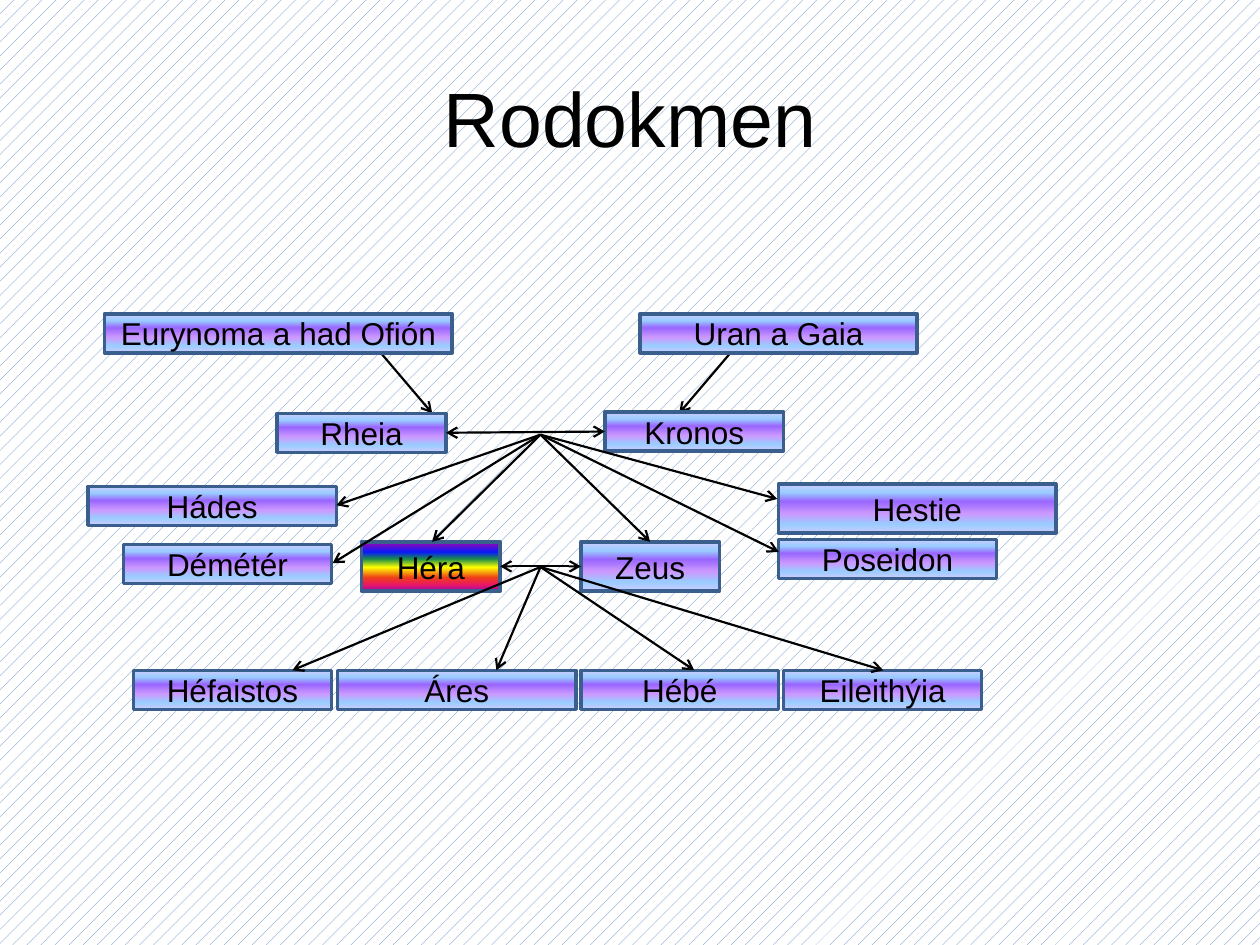
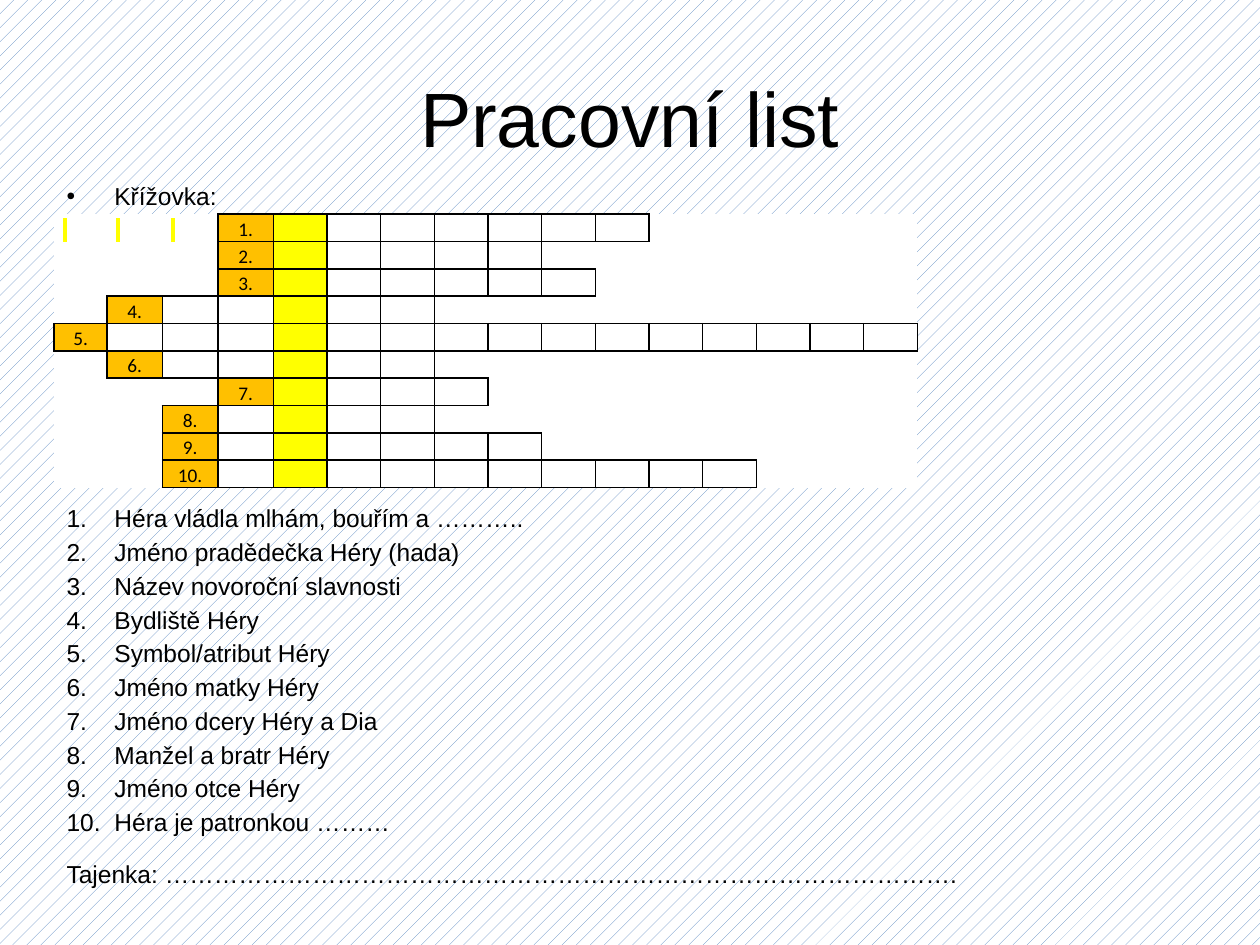
from lxml import etree
from pptx import Presentation
from pptx.dml.color import RGBColor
from pptx.enum.dml import MSO_PATTERN
from pptx.enum.shapes import MSO_CONNECTOR, MSO_SHAPE
from pptx.enum.text import MSO_ANCHOR, PP_ALIGN
from pptx.oxml.ns import qn
from pptx.util import Inches, Pt

BLACK = RGBColor(0x00, 0x00, 0x00)
WHITE = RGBColor(0xFF, 0xFF, 0xFF)
HATCH_BLUE = RGBColor(0x4F, 0x81, 0xBD)
BOX_EDGE = RGBColor(0x3A, 0x5F, 0x8C)
NUMBER_ORANGE = RGBColor(0xFF, 0xC0, 0x00)
SOLUTION_YELLOW = RGBColor(0xFF, 0xFF, 0x00)
LAVENDER = RGBColor(0xCC, 0xCC, 0xFF)
SKY = RGBColor(0x99, 0xCC, 0xFF)
VIOLET = RGBColor(0x99, 0x66, 0xFF)
LILAC = RGBColor(0xCC, 0x99, 0xFF)
PURPLE = RGBColor(0xA6, 0x03, 0xAB)
BLUE = RGBColor(0x08, 0x19, 0xFB)
GREEN = RGBColor(0x1A, 0x8D, 0x48)
RED = RGBColor(0xEE, 0x3F, 0x17)
CRIMSON = RGBColor(0xE8, 0x17, 0x66)

# Gradient stops: percent and colour
DUSK = [(0, LAVENDER), (18, SKY), (36, VIOLET), (61, LILAC), (82, SKY), (100, LAVENDER)]
RAINBOW = [(0, PURPLE), (21, BLUE), (35, GREEN), (52, SOLUTION_YELLOW),
           (73, RED), (88, CRIMSON), (100, PURPLE)]

# Slide grid: 100 columns by 75 rows of square cells
COLUMNS, ROWS = 100, 75
CELL = Inches(0.1)

TITLE_FONT = {"name": "Arial", "size": Pt(44)}
BOX_FONT = {"name": "Arial", "size": Pt(18)}
CLUE_FONT = {"name": "Arial", "size": Pt(14)}
CELL_FONT = {"name": "Calibri", "size": Pt(11)}

# Family tree boxes: left, top, width, height in grid cells
FAMILY = {
    "Héra": (28.7, 43, 11, 3.9),
    "Zeus": (46.1, 43, 11, 3.9),
    "Rheia": (22, 32.8, 13.4, 3.1),
    "Kronos": (48, 32.7, 14.2, 3.1),
    "Eurynoma a had Ofión": (8.3, 24.9, 27.6, 3.1),
    "Uran a Gaia": (50.8, 24.9, 22, 3.1),
    "Héfaistos": (10.6, 53.2, 15.7, 3.1),
    "Áres": (26.8, 53.2, 18.9, 3.1),
    "Hébé": (46.1, 53.2, 15.7, 3.1),
    "Eileithýia": (62.2, 53.2, 15.7, 3.1),
    "Hádes": (7, 38.6, 19.7, 3.1),
    "Démétér": (9.8, 43.2, 16.5, 3.1),
    "Poseidon": (61.8, 42.8, 17.3, 3.1),
    "Hestie": (61.8, 38.4, 22, 3.9),
}
COUPLES = [("Rheia", "Kronos"), ("Héra", "Zeus")]
GRANDPARENT_ARROWS = [((30.3, 28.1), (34.3, 32.8)), ((57.9, 28.1), (53.9, 32.8))]
# Origin of each brood and the ends of its arrows
BROODS = {
    (42.9, 34.5): [(26.7, 40.1), (26.4, 44.7), (34.3, 43), (51.6, 43),
                   (61.7, 39.6), (61.8, 43.8)],
    (42.9, 45): [(23.2, 53.2), (39.4, 53.2), (55.1, 53.2), (70.1, 53.2)],
}

# First and last crossword column of each answer; the first holds its number
ANSWERS = [(3, 10), (3, 8), (3, 9), (1, 6), (0, 15),
           (1, 6), (3, 7), (2, 6), (2, 8), (2, 12)]
SOLUTION_COLUMN = 4
CROSSWORD_WIDTHS = [4.2] + [4.4] * 3 + [4.26] * 12
CROSSWORD_ROW = 2.17

CLUES = [
    "Héra vládla mlhám, bouřím a ………..",
    "Jméno pradědečka Héry (hada)",
    "Název novoroční slavnosti",
    "Bydliště Héry",
    "Symbol/atribut Héry",
    "Jméno matky Héry",
    "Jméno dcery Héry a Dia",
    "Manžel a bratr Héry",
    "Jméno otce Héry",
    "Héra je patronkou ………",
]
SOLUTION_LINE = "Tajenka: ……………………………………………………………………………………."


def cells(*counts):
    return [round(count * CELL) for count in counts]


def apply_format(target, values):
    for attribute, value in values.items():
        setattr(target, attribute, value)


def add_xml(parent, tag, **attributes):
    return etree.SubElement(parent, qn(tag), attributes)


def write(paragraph, text, font, **layout):
    run = paragraph.add_run()
    run.text = text
    apply_format(run.font, font)
    run.font.color.rgb = BLACK
    apply_format(paragraph, layout)
    return run


def add_bullet(paragraph, tag, **attributes):
    properties = paragraph._p.get_or_add_pPr()
    properties.set("marL", str(Inches(0.38)))
    properties.set("indent", str(-Inches(0.38)))
    add_xml(properties, "a:buFont", typeface="Arial")
    add_xml(properties, tag, **attributes)


def add_text_frame(slide, *place, anchor=MSO_ANCHOR.TOP):
    frame = slide.shapes.add_textbox(*cells(*place)).text_frame
    apply_format(frame, {"word_wrap": True, "vertical_anchor": anchor})
    return frame


def add_titled_slide(deck, title):
    slide = deck.slides.add_slide(deck.slide_layouts[6])
    hatch = slide.background.fill
    hatch.patterned()
    hatch.pattern = MSO_PATTERN.PERCENT_10
    hatch.fore_color.rgb = HATCH_BLUE
    hatch.back_color.rgb = WHITE
    frame = add_text_frame(slide, 5, 3, 90, 12.5, anchor=MSO_ANCHOR.MIDDLE)
    write(frame.paragraphs[0], title, TITLE_FONT, alignment=PP_ALIGN.CENTER)
    return slide


def fill_gradient(shape, stops):
    shape.fill.gradient()
    shape.fill.gradient_angle = 270
    stop_list = shape.element.spPr.find(qn("a:gradFill")).find(qn("a:gsLst"))
    for old_stop in list(stop_list):
        stop_list.remove(old_stop)
    for percent, color in stops:
        stop = add_xml(stop_list, "a:gs", pos=str(percent * 1000))
        add_xml(stop, "a:srgbClr", val=str(color))


def add_person(slide, name, place):
    box = slide.shapes.add_shape(MSO_SHAPE.RECTANGLE, *cells(*place))
    box.shadow.inherit = False
    fill_gradient(box, RAINBOW if name == "Héra" else DUSK)
    box.line.color.rgb = BOX_EDGE
    box.line.width = Pt(2)
    box.text_frame.vertical_anchor = MSO_ANCHOR.MIDDLE
    write(box.text_frame.paragraphs[0], name, BOX_FONT, alignment=PP_ALIGN.CENTER)


def add_arrow(slide, start, end, both_ends=False):
    arrow = slide.shapes.add_connector(MSO_CONNECTOR.STRAIGHT, *cells(*start, *end))
    arrow.line.color.rgb = BLACK
    arrow.line.width = Pt(1.25)
    line = arrow.get_or_add_ln()
    for tag in ("a:headEnd", "a:tailEnd") if both_ends else ("a:tailEnd",):
        add_xml(line, tag, type="arrow")
    add_xml(arrow.element.spPr, "a:effectLst")


def add_couple_arrow(slide, wife, husband):
    left, top, width, height = FAMILY[wife]
    his_left, his_top, _, his_height = FAMILY[husband]
    add_arrow(slide, (left + width, top + height / 2),
              (his_left, his_top + his_height / 2), both_ends=True)


def in_answer(row, column):
    if not 0 <= row < len(ANSWERS):
        return False
    first, last = ANSWERS[row]
    return first <= column <= last


def border_cell(cell, row, column):
    """Rule every edge that touches an answer and clear the others."""
    properties = cell._tc.get_or_add_tcPr()
    neighbours = {"a:lnL": (row, column - 1), "a:lnR": (row, column + 1),
                  "a:lnT": (row - 1, column), "a:lnB": (row + 1, column)}
    for position, (tag, neighbour) in enumerate(neighbours.items()):
        edge = etree.Element(qn(tag), w=str(Pt(1)))
        if in_answer(row, column) or in_answer(*neighbour):
            add_xml(add_xml(edge, "a:solidFill"), "a:srgbClr", val=str(BLACK))
        else:
            add_xml(edge, "a:noFill")
        properties.insert(position, edge)


def highlight(run, color):
    mark = etree.Element(qn("a:highlight"))
    add_xml(mark, "a:srgbClr", val=str(color))
    run._r.get_or_add_rPr().find(qn("a:solidFill")).addnext(mark)


def fill_crossword_cell(cell, row, column):
    first = ANSWERS[row][0]
    apply_format(cell, {"margin_left": Inches(0.07), "margin_right": Inches(0.07),
                        "margin_top": 0, "margin_bottom": 0})
    paragraph = cell.text_frame.paragraphs[0]
    paragraph.line_spacing = 1.15
    color = WHITE
    if column == first:
        color = NUMBER_ORANGE
        write(paragraph, f"{row + 1}.", CELL_FONT, alignment=PP_ALIGN.CENTER)
    elif row == 0 and column < first:
        highlight(write(paragraph, " ", CELL_FONT), SOLUTION_YELLOW)
    else:
        add_xml(paragraph._p, "a:endParaRPr", sz="1100")
        if column == SOLUTION_COLUMN:
            color = SOLUTION_YELLOW
    cell.fill.solid()
    cell.fill.fore_color.rgb = color
    border_cell(cell, row, column)


def add_crossword(slide, left, top):
    place = cells(left, top, sum(CROSSWORD_WIDTHS), CROSSWORD_ROW * len(ANSWERS))
    grid = slide.shapes.add_table(len(ANSWERS), len(CROSSWORD_WIDTHS), *place).table
    apply_format(grid, {"first_row": False, "horz_banding": False})
    for column, width in enumerate(CROSSWORD_WIDTHS):
        grid.columns[column].width = cells(width)[0]
    for row in range(len(ANSWERS)):
        for column in range(len(CROSSWORD_WIDTHS)):
            fill_crossword_cell(grid.cell(row, column), row, column)


def add_clues(slide):
    frame = add_text_frame(slide, 4.3, 39.1, 81.1, 32.2)
    for clue in CLUES:
        last = clue == CLUES[-1]
        paragraph = frame.paragraphs[0] if clue == CLUES[0] else frame.add_paragraph()
        write(paragraph, clue, CLUE_FONT, line_spacing=1.15,
              space_after=Pt(10 if last else 0))
        add_bullet(paragraph, "a:buAutoNum", type="arabicPeriod")
    write(frame.add_paragraph(), SOLUTION_LINE, CLUE_FONT,
          line_spacing=1.15, space_after=Pt(10))


def build_family_tree(deck):
    slide = add_titled_slide(deck, "Rodokmen")
    for start, end in GRANDPARENT_ARROWS:
        add_arrow(slide, start, end)
    for name, place in FAMILY.items():
        add_person(slide, name, place)
    for couple in COUPLES:
        add_couple_arrow(slide, *couple)
    for origin, children in BROODS.items():
        for child in children:
            add_arrow(slide, origin, child)


def build_worksheet(deck):
    slide = add_titled_slide(deck, "Pracovní list")
    heading = add_text_frame(slide, 4.3, 13.9, 90, 49.5).paragraphs[0]
    write(heading, "Křížovka:", CLUE_FONT, space_before=Pt(2.8))
    add_bullet(heading, "a:buChar", char="•")
    add_crossword(slide, 4.3, 17)
    add_clues(slide)


def main():
    deck = Presentation()
    deck.slide_width, deck.slide_height = cells(COLUMNS, ROWS)
    build_family_tree(deck)
    build_worksheet(deck)
    deck.save("out.pptx")


if __name__ == "__main__":
    main()
